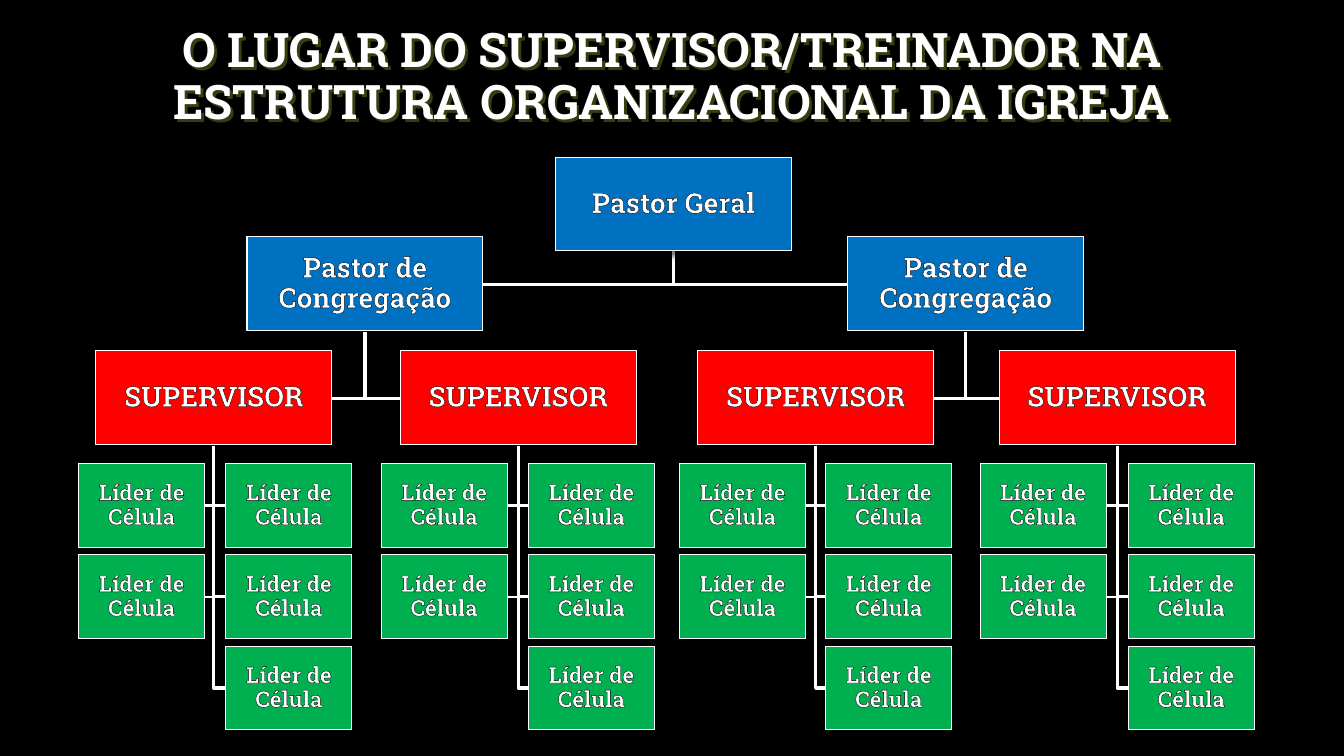
"""Church organisation chart showing the place of the supervisor."""
from lxml import etree
from pptx import Presentation
from pptx.dml.color import RGBColor
from pptx.enum import shapes, text
from pptx.oxml import ns, parse_xml
from pptx.util import Inches, Pt

COLORS = {"background": "000000", "white": "FFFFFF", "pastor": "0070C0",
          "supervisor": "FF0000", "leader": "00B050", "title_shadow": "333F0F"}
FONT = "Roboto Slab"
LARGE = (2.34, 0.93)
SMALL = (1.25, 0.83)
THIN, THICK = 1.5, 2.25


def format_text(shape, content, size, margin):
    """Write centred bold white text into a shape and return its run."""
    frame = shape.text_frame
    settings = {"word_wrap": True, "vertical_anchor": text.MSO_ANCHOR.MIDDLE,
                "margin_left": margin, "margin_right": margin,
                "margin_top": margin, "margin_bottom": margin}
    for name, value in settings.items():
        setattr(frame, name, value)
    paragraph = frame.paragraphs[0]
    paragraph.alignment = text.PP_ALIGN.CENTER
    paragraph.line_spacing = 0.9
    run = paragraph.add_run()
    run.text = content
    for name, value in {"name": FONT, "size": Pt(size), "bold": True}.items():
        setattr(run.font, name, value)
    run.font.color.rgb = RGBColor.from_string(COLORS["white"])
    return run


def style_shape(shape, line_width, fill=None):
    """Give a shape a white line, an optional fill and no shadow."""
    shape.shadow.inherit = False
    shape.line.color.rgb = RGBColor.from_string(COLORS["white"])
    shape.line.width = Pt(line_width)
    if fill:
        shape.fill.solid()
        shape.fill.fore_color.rgb = RGBColor.from_string(COLORS[fill])
    else:
        shape.fill.background()


presentation = Presentation()
presentation.slide_width = Inches(13.33)
presentation.slide_height = Inches(7.5)
slide = presentation.slides.add_slide(presentation.slide_layouts[5])
slide.background.fill.solid()
slide.background.fill.fore_color.rgb = RGBColor.from_string(COLORS["background"])

title = slide.shapes.title
for name, value in {"left": 0.76, "top": 0.26, "width": 11.81, "height": 1.03}.items():
    setattr(title, name, Inches(value))
format_text(title, "O LUGAR DO SUPERVISOR/TREINADOR NA ESTRUTURA ORGANIZACIONAL DA IGREJA", 34, 0)
title.text_frame.auto_size = text.MSO_AUTO_SIZE.SHAPE_TO_FIT_TEXT

boxes = [(5.51, 1.56, LARGE, "pastor", "Pastor Geral", 20)]
elbows = []
for left, inner_side in ((2.45, 4.79), (8.41, 8.41)):
    boxes.append((left, 2.35, LARGE, "pastor", "Pastor de Congregação", 20))
    elbows.append((6.68, 2.49, inner_side, 2.82, THICK))

teams = [(0.95, 0.78, 2.24, 3.62), (3.97, 3.78, 5.24, 3.62),
         (6.92, 6.74, 8.19, 9.58), (9.91, 9.72, 11.19, 9.58)]
for left, left_column, right_column, pastor_center in teams:
    trunk = left + LARGE[0] / 2
    inner_side = left + LARGE[0] if left < pastor_center - 1 else left
    boxes.append((left, 3.48, LARGE, "supervisor", "SUPERVISOR", 20))
    elbows.append((pastor_center, 3.29, inner_side, 3.95, THICK))
    for column, side, rows in ((left_column, left_column + SMALL[0], 2),
                               (right_column, right_column, 3)):
        for row in range(rows):
            top = 4.6 + 0.905 * row
            width = THICK if row and column == right_column else THIN
            boxes.append((column, top, SMALL, "leader", "Líder de Célula", 16))
            elbows.append((trunk, 4.42, side, top + SMALL[1] / 2, width))

for start_x, start_y, end_x, end_y, width in elbows:
    builder = slide.shapes.build_freeform(Inches(start_x), Inches(start_y))
    builder.add_line_segments([(Inches(start_x), Inches(end_y)),
                               (Inches(end_x), Inches(end_y))], close=False)
    style_shape(builder.convert_to_shape(), width)

box_shapes = []
for left, top, (width, height), fill, label, size in boxes:
    box = slide.shapes.add_shape(shapes.MSO_SHAPE.RECTANGLE, Inches(left), Inches(top),
                                 Inches(width), Inches(height))
    style_shape(box, 0.75, fill)
    run = format_text(box, label, size, Inches(0.01))
    outline = parse_xml(
        f'<a:ln {ns.nsdecls("a")} w="9525"><a:solidFill>'
        f'<a:srgbClr val="{COLORS["background"]}"/></a:solidFill></a:ln>')
    run.font._element.insert(0, outline)
    box_shapes.append(box)

shadows = [(title, "title_shadow", 100, 0, 3, 45),
           (box_shapes[0], "background", 54, 4, 3, 90)]
for shape, color, opacity, blur, distance, angle in shadows:
    shape.shadow.inherit = False
    effects = shape._element.spPr.find(ns.qn("a:effectLst"))
    shadow = etree.SubElement(effects, ns.qn("a:outerShdw"), blurRad=str(Pt(blur)),
                              dist=str(Pt(distance)), dir=str(angle * 60000))
    shade = etree.SubElement(shadow, ns.qn("a:srgbClr"), val=COLORS[color])
    etree.SubElement(shade, ns.qn("a:alpha"), val=str(opacity * 1000))

presentation.save("out.pptx")
